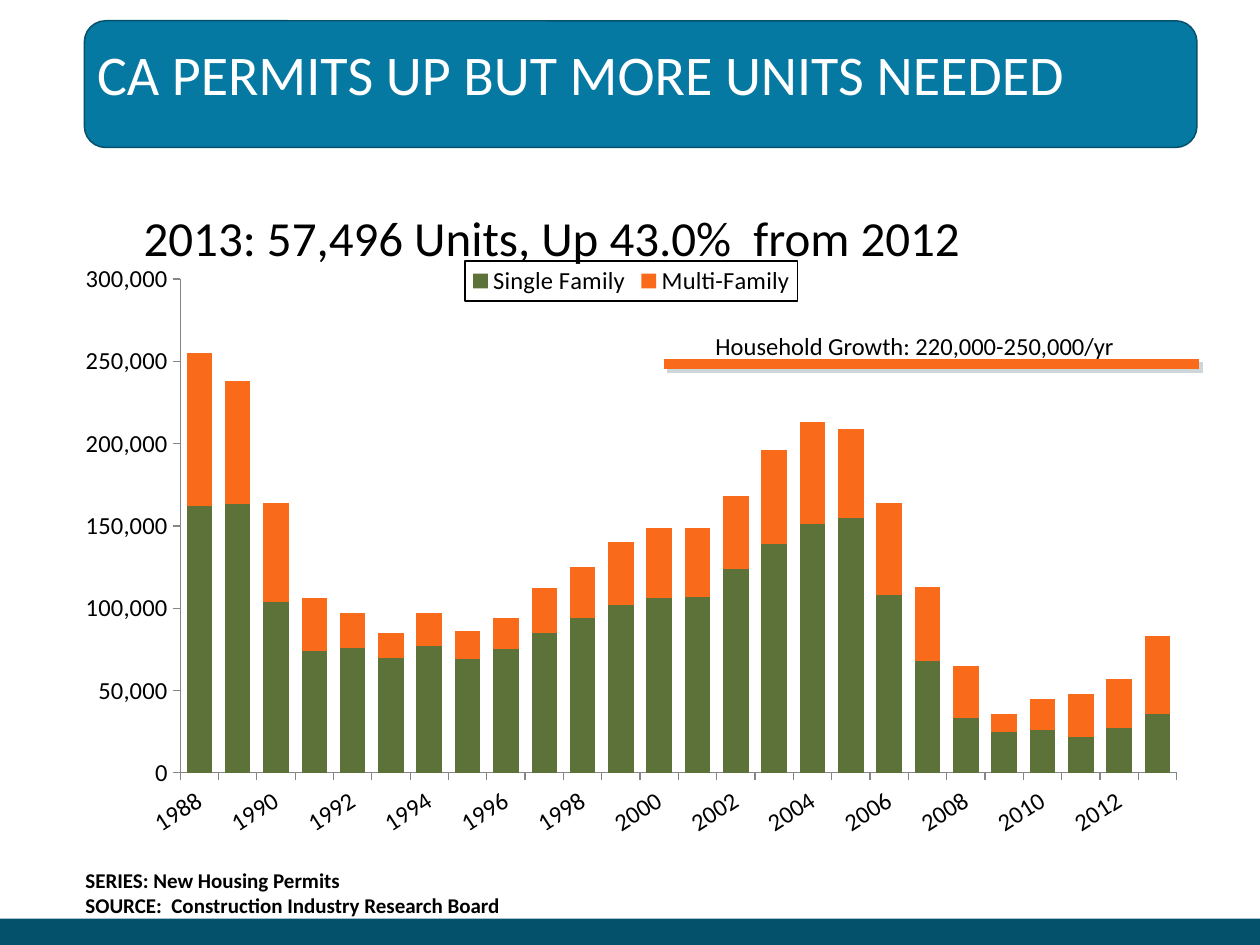
"""Build the slide on California housing permits by year and type."""
from lxml import etree
from pptx import Presentation
from pptx.chart.data import CategoryChartData
from pptx.dml.color import RGBColor
from pptx.enum.chart import XL_CHART_TYPE as ChartType, XL_LEGEND_POSITION as LegendSpot, XL_TICK_MARK as Tick
from pptx.enum.shapes import MSO_CONNECTOR as Connector, MSO_SHAPE as Shape
from pptx.enum.text import MSO_ANCHOR as Anchor, MSO_AUTO_SIZE as Fit, PP_ALIGN as Align
from pptx.oxml import parse_xml
from pptx.oxml.ns import nsdecls, qn
from pptx.util import Inches, Pt

paint = RGBColor.from_string
NAVY, TEAL, ORANGE, GREEN, GRAY = "04516C", "0679A3", "F96A1B", "5D7238", "868686"

deck = Presentation()
deck.slide_width, deck.slide_height = Inches(10), Inches(7.5)
slide = deck.slides.add_slide(deck.slide_layouts[1])
shapes = slide.shapes


def area(left, top, width, height):
    """Turn percentages of the slide into lengths."""
    sides = (deck.slide_width, deck.slide_height) * 2
    return [int(side * share / 100) for side, share in zip(sides, (left, top, width, height))]


def write(holder, text, size, color="000000", bold=False, anchor=Anchor.TOP, fit=Fit.NONE):
    """Fill a shape with left-aligned, unbulleted lines of text."""
    frame = holder.text_frame
    frame.text = text
    frame.word_wrap, frame.vertical_anchor, frame.auto_size = True, anchor, fit
    for line in frame.paragraphs:
        props = line._p.get_or_add_pPr()
        props.set("marL", "0")
        props.set("indent", "0")
        etree.SubElement(props, qn("a:buNone"))
        line.alignment, line.space_before = Align.LEFT, Pt(0)
        font = line.font
        font.name, font.size, font.bold = "Calibri", Pt(size), bold
        font.color.rgb = paint(color)


for kind, place, fill, edge in (
    (Shape.RECTANGLE, (0, 97.2, 100, 2.8), NAVY, None),
    (Shape.FLOWCHART_ALTERNATE_PROCESS, (6.7, 2.2, 88.3, 13.4), TEAL, NAVY),
):
    band = shapes.add_shape(kind, *area(*place))
    band.shadow.inherit = False
    band.fill.solid()
    band.fill.fore_color.rgb = paint(fill)
    if edge:
        band.line.color.rgb, band.line.width = paint(edge), Pt(0.85)
    else:
        band.line.fill.background()

permits = CategoryChartData(number_format="#,##0")
permits.categories = [str(year) for year in range(1988, 2014)]
thousands = {
    "Single Family": [162, 163, 104, 74, 76, 70, 77, 69, 75, 85, 94, 102, 106,
                      107, 124, 139, 151, 155, 108, 68, 33, 25, 26, 22, 27, 36],
    "Multi-Family": [93, 75, 60, 32, 21, 15, 20, 17, 19, 27, 31, 38, 43,
                     42, 44, 57, 62, 54, 56, 45, 32, 11, 19, 26, 30, 47],
}
for family, units in thousands.items():
    permits.add_series(family, [unit * 1000 for unit in units])

chart_place = (5, 26.67, 90.2, 63.33)
chart = shapes.add_chart(ChartType.COLUMN_STACKED, *area(*chart_place), permits).chart
chart.has_title = False
chart.font.name, chart.font.size = "Calibri", Pt(14)
chart.font.color.rgb = paint("000000")
bars = chart.plots[0]
bars.gap_width, bars.overlap, bars.vary_by_categories = 50, 100, False
for series, color in zip(bars.series, (GREEN, ORANGE)):
    series.format.fill.solid()
    series.format.fill.fore_color.rgb = paint(color)

years, amounts = chart.category_axis, chart.value_axis
for axis in (years, amounts):
    axis.has_major_gridlines = False
    axis.major_tick_mark, axis.minor_tick_mark = Tick.OUTSIDE, Tick.NONE
    axis.format.line.color.rgb = paint(GRAY)
    axis.tick_labels.font.size = Pt(14)
amounts.minimum_scale, amounts.maximum_scale, amounts.major_unit = 0, 300000, 50000
amounts.tick_labels.number_format = "#,##0"
amounts.tick_labels.number_format_is_linked = False
years._element.find(qn("c:txPr")).find(qn("a:bodyPr")).set("rot", "-1980000")
skip = parse_xml(f'<c:tickLblSkip {nsdecls("c")} val="2"/>')
years._element.find(qn("c:noMultiLvlLbl")).addprevious(skip)

chart.has_legend = True
legend = chart.legend
legend.position, legend.include_in_layout = LegendSpot.TOP, True
legend._element.find(qn("c:overlay")).addnext(parse_xml(
    f'<c:spPr {nsdecls("c", "a")}><a:ln w="9525"><a:solidFill><a:srgbClr val="000000"/>'
    '</a:solidFill></a:ln></c:spPr>'))

plot_area = chart._chartSpace.chart.plotArea
for part, spot, target, place in (
    (plot_area, 0, '<c:layoutTarget val="inner"/>', (14.3, 29.52, 79.1, 52.27)),
    (legend._element, 1, "", (36.9, 27.62, 26.4, 4.23)),
):
    for old in part.findall(qn("c:layout")):
        part.remove(old)
    left, top, width, height = chart_place
    shares = ((place[0] - left) / width, (place[1] - top) / height, place[2] / width, place[3] / height)
    sizes = "".join(f'<c:{side} val="{share:.4f}"/>' for side, share in zip("xywh", shares))
    part.insert(spot, parse_xml(
        f'<c:layout {nsdecls("c")}><c:manualLayout>{target}<c:xMode val="edge"/>'
        f'<c:yMode val="edge"/>{sizes}</c:manualLayout></c:layout>'))

headline, summary = shapes.title, slide.placeholders[1]
for holder, place in ((headline, (6.7, 3.3, 88.3, 8.9)), (summary, (10.4, 21.3, 82.9, 68.7))):
    holder.left, holder.top, holder.width, holder.height = area(*place)
    shapes._spTree.append(holder._element)
write(headline, "CA PERMITS UP BUT MORE UNITS NEEDED", 32, color="FFFFFF", anchor=Anchor.MIDDLE)
write(summary, "2013: 57,496 Units, Up 43.0%  from 2012", 28)

start_x, growth_y, end_x, _ = area(52.7, 38.53, 95.2, 0)
growth = shapes.add_connector(Connector.STRAIGHT, start_x, growth_y, end_x, growth_y)
growth.line.color.rgb, growth.line.width = paint(ORANGE), Pt(6)
growth._element.spPr.append(parse_xml(
    f'<a:effectLst {nsdecls("a")}><a:outerShdw dist="35560" dir="2700000" algn="ctr" rotWithShape="0">'
    '<a:srgbClr val="CDD7D9"/></a:outerShdw></a:effectLst>'))

growth_label = shapes.add_textbox(*area(55.8, 34.4, 44.2, 4.4))
write(growth_label, "Household Growth: 220,000-250,000/yr", 14, fit=Fit.SHAPE_TO_FIT_TEXT)
source = shapes.add_textbox(*area(5.8, 91.1, 36.7, 6.7))
write(source, "SERIES: New Housing Permits\nSOURCE:  Construction Industry Research Board", 12,
      bold=True, fit=Fit.SHAPE_TO_FIT_TEXT)

deck.save("out.pptx")
